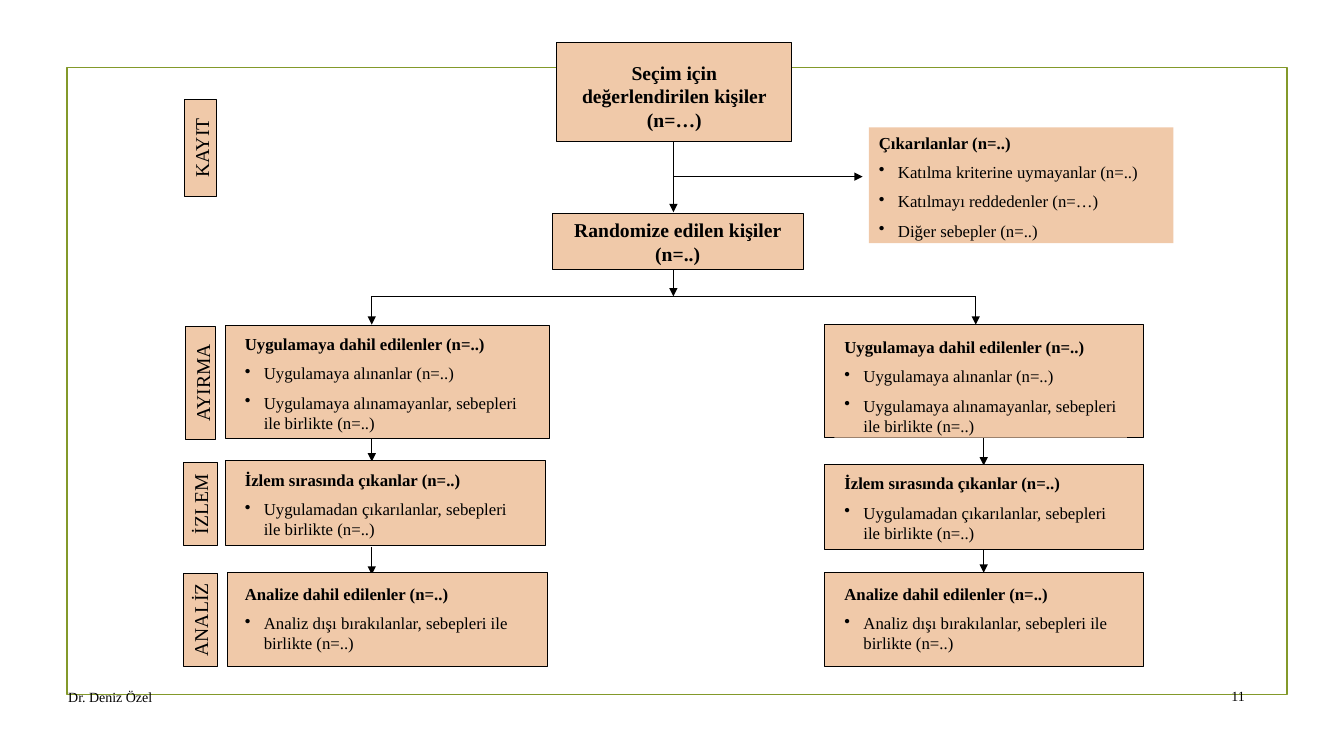
from lxml import etree
from pptx import Presentation
from pptx.dml.color import RGBColor
from pptx.enum.shapes import MSO_CONNECTOR, MSO_SHAPE
from pptx.enum.text import MSO_ANCHOR, PP_ALIGN
from pptx.oxml.ns import qn
from pptx.util import Cm, Pt

RECTANGLE = MSO_SHAPE.RECTANGLE
STRAIGHT = MSO_CONNECTOR.STRAIGHT
TOP, MIDDLE = MSO_ANCHOR.TOP, MSO_ANCHOR.MIDDLE
LEFT, CENTER, RIGHT = PP_ALIGN.LEFT, PP_ALIGN.CENTER, PP_ALIGN.RIGHT

FONT = "Times New Roman"
PEACH, BLACK, GREEN = "F0C9A9", "000000", "83992A"
LEFT_ARM, TRUNK, RIGHT_ARM, RIGHT_FLOW = 9.37, 16.97, 24.59, 24.79
BRANCH_Y = 7.47

EXCLUDED = ["Çıkarılanlar (n=..)", "Katılma kriterine uymayanlar (n=..)",
            "Katılmayı reddedenler (n=…)", "Diğer sebepler (n=..)"]
ALLOCATION = ["Uygulamaya dahil edilenler (n=..)", "Uygulamaya alınanlar (n=..)",
              "Uygulamaya alınamayanlar, sebepleri ile birlikte (n=..)"]
FOLLOW_UP = ["İzlem sırasında çıkanlar (n=..)",
             "Uygulamadan çıkarılanlar, sebepleri ile birlikte (n=..)"]
ANALYSIS = ["Analize dahil edilenler (n=..)",
            "Analiz dışı bırakılanlar, sebepleri ile birlikte (n=..)"]

# Lines, frame (left, top, width, height), text area (left, top, width, height)
STAGES = [
    (ALLOCATION, (5.69, 8.2, 8.15, 2.84), (5.92, 8.28, 7.87, 2.67)),
    (ALLOCATION, (20.78, 8.18, 8.05, 2.84), (21.03, 8.36, 7.37, 2.67)),
    (FOLLOW_UP, (5.69, 11.61, 8.05, 2.13), (5.92, 11.71, 7.24, 1.93)),
    (FOLLOW_UP, (20.78, 11.71, 8.05, 2.13), (21.03, 11.79, 7.62, 1.93)),
    (ANALYSIS, (5.74, 14.43, 8.05, 2.36), (5.92, 14.58, 7.82, 1.93)),
    (ANALYSIS, (20.78, 14.43, 8.05, 2.36), (21.03, 14.58, 7.57, 1.93)),
]
# Text, centre height, length, thickness
PHASES = [("KAYIT", 3.73, 2.46, 0.81), ("AYIRMA", 9.65, 2.84, 0.76),
          ("İZLEM", 12.7, 2.08, 0.86), ("ANALİZ", 15.62, 2.36, 0.86)]
PHASE_X = 5.06
# Start x, start y, end x, end y
ARROWS = [
    (TRUNK, 3.56, TRUNK, 5.35),
    (TRUNK, 4.45, 21.74, 4.45),
    (TRUNK, 6.76, TRUNK, BRANCH_Y),
    (LEFT_ARM, BRANCH_Y, LEFT_ARM, 8.18),
    (RIGHT_ARM, BRANCH_Y, RIGHT_ARM, 8.18),
    (LEFT_ARM, 10.92, LEFT_ARM, 11.63),
    (RIGHT_FLOW, 11.02, RIGHT_FLOW, 11.73),
    (LEFT_ARM, 13.79, LEFT_ARM, 14.48),
    (RIGHT_FLOW, 13.84, RIGHT_FLOW, 14.43),
]


def color(value):
    return RGBColor.from_string(value)


def add_box(page, area, fill=PEACH, line=BLACK, line_width=0.75):
    box = page.shapes.add_shape(RECTANGLE, *map(Cm, area))
    box.shadow.inherit = False
    if fill:
        box.fill.solid()
        box.fill.fore_color.rgb = color(fill)
    else:
        box.fill.background()
    if line:
        box.line.color.rgb = color(line)
        box.line.width = Pt(line_width)
    else:
        box.line.fill.background()
    return box


def add_line(page, ends, arrow=False):
    line = page.shapes.add_connector(STRAIGHT, *map(Cm, ends))
    line.line.color.rgb = color(BLACK)
    line.line.width = Pt(0.75)
    if arrow:
        etree.SubElement(line.line._get_or_add_ln(), qn("a:tailEnd"), type="triangle")
    etree.SubElement(line._element.spPr, qn("a:effectLst"))


def add_bullet(para):
    properties = para._p.get_or_add_pPr()
    properties.set("marL", str(Cm(0.48)))
    properties.set("indent", str(-Cm(0.48)))
    etree.SubElement(properties, qn("a:buChar"), char="•")


def write(para, text, size, align=LEFT, bold=False):
    para.alignment = align
    span = para.add_run()
    span.text = text
    span.font.name = FONT
    span.font.size = Pt(size)
    span.font.bold = bold
    span.font.color.rgb = color(BLACK)


def prepare_frame(box, anchor=TOP):
    frame = box.text_frame
    frame.word_wrap = True
    frame.vertical_anchor = anchor
    return frame


def write_list(box, lines):
    """Write a bold heading followed by bulleted lines."""
    frame = prepare_frame(box)
    heading, *items = lines
    write(frame.paragraphs[0], heading, 12, bold=True)
    for item in items:
        para = frame.add_paragraph()
        para.space_before = Pt(6.6)
        add_bullet(para)
        write(para, item, 12)


def write_centered(box, text, bold):
    write(prepare_frame(box).paragraphs[0], text, 14, CENTER, bold)


def add_phase(page, text, center_y, length, thickness):
    area = (PHASE_X - length / 2, center_y - thickness / 2, length, thickness)
    label = add_box(page, area)
    label.rotation = 270
    write_centered(label, text, False)


def add_footer(page, area, text, align):
    box = page.shapes.add_textbox(*map(Cm, area))
    write(prepare_frame(box, MIDDLE).paragraphs[0], text, 10, align)


def main():
    deck = Presentation()
    deck.slide_width, deck.slide_height = Cm(33.87), Cm(19.05)
    page = deck.slides.add_slide(deck.slide_layouts[6])

    add_box(page, (1.69, 1.7, 30.74, 15.8), None, GREEN, 1.25)
    for end_x in (LEFT_ARM, RIGHT_ARM):
        add_line(page, (TRUNK, BRANCH_Y, end_x, BRANCH_Y))
    for ends in ARROWS:
        add_line(page, ends, arrow=True)

    add_box(page, (14.02, 1.07, 5.94, 2.5))
    assessed = add_box(page, (14.33, 1.4, 5.33, 1.93), line=None)
    write_centered(assessed, "Seçim için değerlendirilen kişiler (n=…)", True)
    randomized = add_box(page, (13.92, 5.37, 6.32, 1.42))
    write_centered(randomized, "Randomize edilen kişiler (n=..)", True)
    write_list(add_box(page, (21.9, 3.21, 7.67, 2.92), line=None), EXCLUDED)

    for lines, frame_area, text_area in STAGES:
        add_box(page, frame_area)
        write_list(add_box(page, text_area, line=None), lines)
    for phase in PHASES:
        add_phase(page, *phase)

    add_footer(page, (1.47, 17.17, 20.29, 0.79), "Dr. Deniz Özel", LEFT)
    add_footer(page, (30.12, 17.15, 1.5, 0.79), "11", RIGHT)
    deck.save("out.pptx")


if __name__ == "__main__":
    main()
